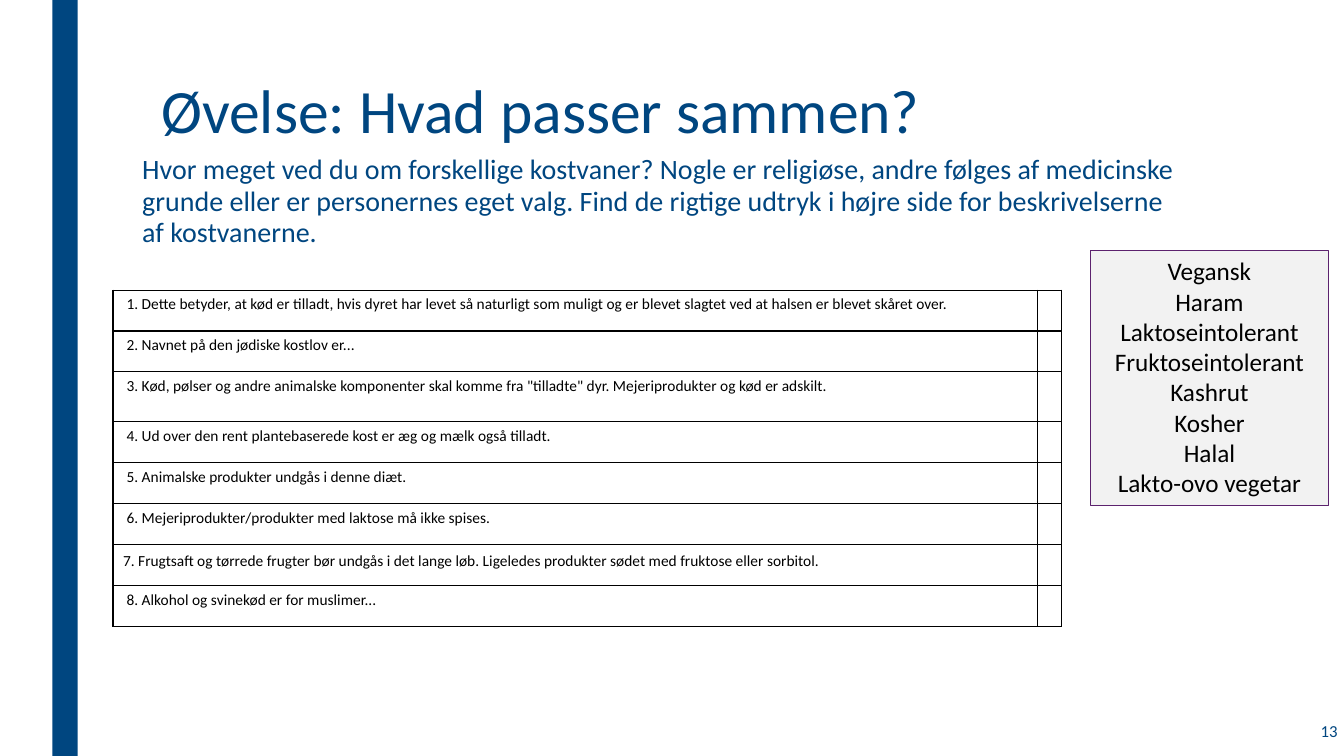
from lxml import etree
from pptx import Presentation
from pptx.dml.color import RGBColor
from pptx.enum.shapes import MSO_SHAPE
from pptx.enum.text import MSO_ANCHOR, MSO_AUTO_SIZE, PP_ALIGN
from pptx.oxml import parse_xml
from pptx.oxml.ns import qn
from pptx.util import Cm, Pt

RECTANGLE = MSO_SHAPE.RECTANGLE
TOP, MIDDLE = MSO_ANCHOR.TOP, MSO_ANCHOR.MIDDLE
LEFT, CENTER, RIGHT = PP_ALIGN.LEFT, PP_ALIGN.CENTER, PP_ALIGN.RIGHT
NO_FIT = MSO_AUTO_SIZE.NONE
DRAWING = "http://schemas.openxmlformats.org/drawingml/2006/main"
COLORS = {"blue": "004680", "black": "000000", "grey": "F2F2F2", "purple": "5C226E"}

DESCRIPTIONS = [
    "1. Dette betyder, at kød er tilladt, hvis dyret har levet så naturligt som muligt og er blevet slagtet ved at halsen er blevet skåret over.",
    "2. Navnet på den jødiske kostlov er...",
    "3. Kød, pølser og andre animalske komponenter skal komme fra \"tilladte\" dyr. Mejeriprodukter og kød er adskilt.",
    "4. Ud over den rent plantebaserede kost er æg og mælk også tilladt.",
    "5. Animalske produkter undgås i denne diæt.",
    "6. Mejeriprodukter/produkter med laktose må ikke spises.",
    "7. Frugtsaft og tørrede frugter bør undgås i det lange løb. Ligeledes produkter sødet med fruktose eller sorbitol.",
    "8. Alkohol og svinekød er for muslimer...",
]
TERMS = ["Vegansk\vHaram", "Laktoseintolerant", "Fruktoseintolerant", "Kashrut",
         "Kosher", "Halal", "Lakto-ovo vegetar"]


def style(paragraph, size, color, alignment=LEFT):
    paragraph.alignment = alignment
    paragraph.font.name = "Calibri"
    paragraph.font.size = Pt(size)
    paragraph.font.color.rgb = RGBColor.from_string(COLORS[color])


def place(shape, left, top, width, height):
    shape.left, shape.top = Cm(left), Cm(top)
    shape.width, shape.height = Cm(width), Cm(height)


deck = Presentation()
deck.slide_width, deck.slide_height = Cm(33.87), Cm(19.05)
page = deck.slides.add_slide(deck.slide_layouts[1])

bar = page.shapes.add_shape(RECTANGLE, Cm(1.32), 0, Cm(0.64), deck.slide_height)
bar.shadow.inherit = False
bar.fill.solid()
bar.fill.fore_color.rgb = RGBColor.from_string(COLORS["blue"])
bar.line.fill.background()

title = page.shapes.title
place(title, 3.81, 1.9, 26.67, 4.11)
title.text_frame.text = "Øvelse: Hvad passer sammen?"
title.text_frame.vertical_anchor = TOP
title.text_frame.auto_size = NO_FIT
heading = title.text_frame.paragraphs[0]
heading.line_spacing = 0.89
style(heading, 44, "blue")

body = page.placeholders[1]
place(body, 3.33, 3.76, 26.67, 9.96)
body.text_frame.text = (
    "Hvor meget ved du om forskellige kostvaner? Nogle er religiøse, andre følges af "
    "medicinske grunde eller er personernes eget valg. Find de rigtige udtryk i højre "
    "side for beskrivelserne af kostvanerne."
)
body.text_frame.auto_size = NO_FIT
intro = body.text_frame.paragraphs[0]
properties = intro._p.get_or_add_pPr()
properties.set("marL", "0")
properties.set("indent", "0")
etree.SubElement(properties, qn("a:buNone"))
intro.line_spacing = 0.94
intro.space_before = Pt(0)
intro.space_after = Pt(2)
style(intro, 20, "blue")

number = page.shapes.add_textbox(Cm(29.51), Cm(17.86), Cm(4.45), Cm(1.12))
number.text_frame.word_wrap = True
number.text_frame.vertical_anchor = MIDDLE
number.text_frame.text = "13"
style(number.text_frame.paragraphs[0], 12, "blue", RIGHT)

table = page.shapes.add_table(len(DESCRIPTIONS), 2, Cm(2.85), Cm(7.31), Cm(23.9), Cm(8.47)).table
table.first_row = False
table.horz_banding = False
table.columns[0].width, table.columns[1].width = Cm(23.29), Cm(0.61)
for index, description in enumerate(DESCRIPTIONS):
    table.rows[index].height = Cm(1.26 if index == 2 else 1.03)
    for cell, text in zip(table.rows[index].cells, (description, "")):
        cell.text = text
        if text:
            cell.margin_left = Cm(0.25 if index == 6 else 0.34)
        paragraph = cell.text_frame.paragraphs[0]
        if index == 6:
            paragraph.line_spacing = Pt(15)
        style(paragraph, 11, "black")
        cell_properties = cell._tc.get_or_add_tcPr()
        for side in ("lnL", "lnR", "lnT", "lnB"):
            cell_properties.append(parse_xml(
                f'<a:{side} xmlns:a="{DRAWING}" w="12700"><a:solidFill>'
                f'<a:srgbClr val="{COLORS["black"]}"/></a:solidFill></a:{side}>'
            ))
        cell.fill.background()

terms_box = page.shapes.add_shape(RECTANGLE, Cm(27.48), Cm(6.32), Cm(6), Cm(6.41))
terms_box.shadow.inherit = False
terms_box.fill.solid()
terms_box.fill.fore_color.rgb = RGBColor.from_string(COLORS["grey"])
terms_box.line.color.rgb = RGBColor.from_string(COLORS["purple"])
terms_box.line.width = Pt(0.75)
terms_box.text_frame.word_wrap = True
terms_box.text_frame.vertical_anchor = TOP
terms_box.text_frame.text = TERMS[0]
for term in TERMS[1:]:
    terms_box.text_frame.add_paragraph().text = term
for paragraph in terms_box.text_frame.paragraphs:
    style(paragraph, 18, "black", CENTER)

deck.save("out.pptx")
